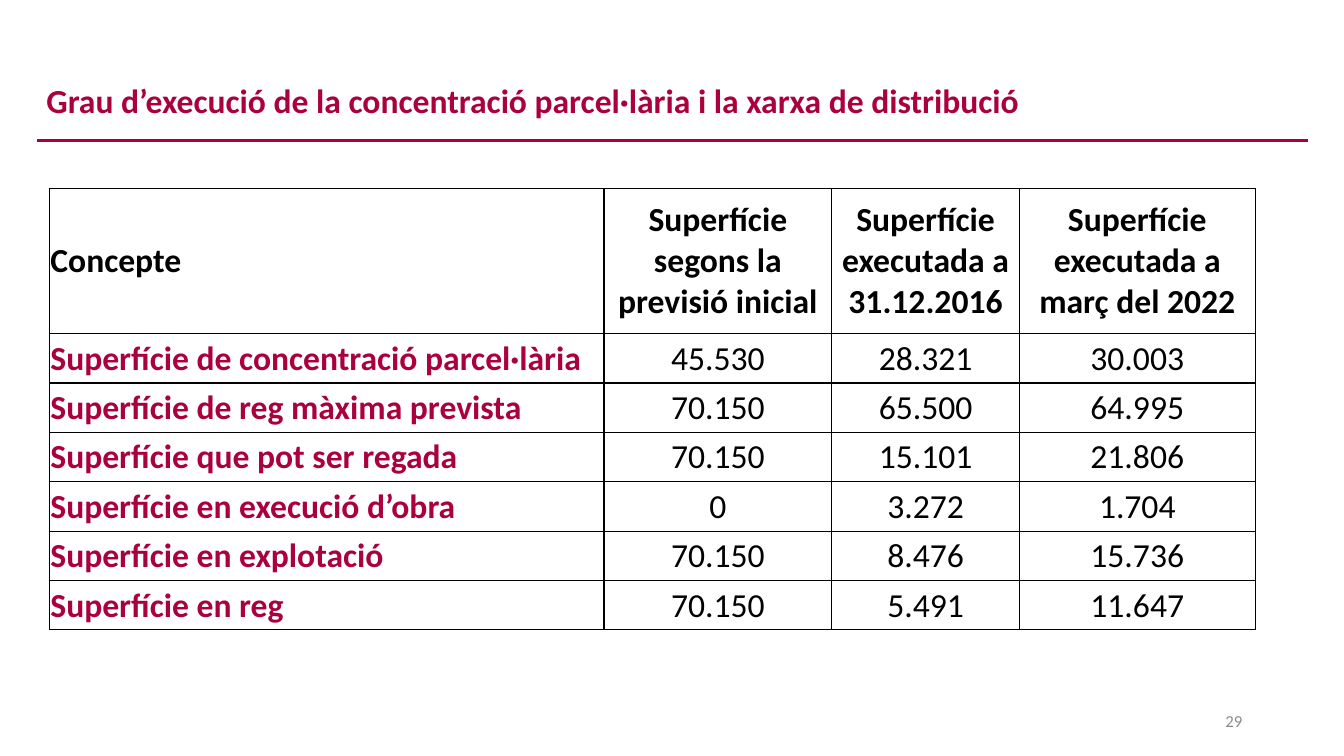
from lxml import etree
from pptx import Presentation
from pptx import util as u
from pptx.dml.color import RGBColor
from pptx.enum import shapes, text
from pptx.oxml.ns import qn

PX = 9144  # EMU in one px, 100 px to the inch
COLORS = {"crimson": "AB003E", "black": "000000", "white": "FFFFFF", "grey": "8C8C8C"}

TITLE = "Grau d’execució de la concentració parcel·lària i la xarxa de distribució"
COL_WIDTHS = [550, 226, 186, 234]
HEADER_HEIGHT, ROW_HEIGHT = 144, 49
ROWS = [
    ["Concepte", "Superfície segons la previsió inicial",
     "Superfície executada a 31.12.2016", "Superfície executada a març del 2022"],
    ["Superfície de concentració parcel·lària", "45.530", "28.321", "30.003"],
    ["Superfície de reg màxima prevista", "70.150", "65.500", "64.995"],
    ["Superfície que pot ser regada", "70.150", "15.101", "21.806"],
    ["Superfície en execució d’obra", "0", "3.272", "1.704"],
    ["Superfície en explotació", "70.150", "8.476", "15.736"],
    ["Superfície en reg", "70.150", "5.491", "11.647"],
]


def px(*lengths):
    return [u.Emu(length * PX) for length in lengths]


def rgb(name):
    return RGBColor.from_string(COLORS[name])


def set_attrs(obj, values):
    for name, value in values.items():
        setattr(obj, name, value)


def write(tf, content, size, color, bold=False, align=text.PP_ALIGN.LEFT):
    tf.text = content
    p = tf.paragraphs[0]
    p.alignment = align
    font = p.runs[0].font
    set_attrs(font, {"name": "Calibri", "size": u.Pt(size), "bold": bold})
    font.color.rgb = rgb(color)
    return p


def place_text(sp, box, content, size, color, **style):
    """Position a title or text box and fill it with one paragraph."""
    set_attrs(sp, dict(zip(("left", "top", "width", "height"), px(*box))))
    set_attrs(sp.text_frame, {"word_wrap": True, "auto_size": text.MSO_AUTO_SIZE.NONE,
                              "vertical_anchor": text.MSO_ANCHOR.MIDDLE})
    return write(sp.text_frame, content, size, color, **style)


def add_rule(s, x1, x2, y):
    line = s.shapes.add_connector(shapes.MSO_CONNECTOR.STRAIGHT, *px(x1, y, x2, y))
    line.line.color.rgb = rgb("crimson")
    line.line.width = u.Pt(2.25)
    etree.SubElement(line._element.spPr, qn("a:effectLst"))


def add_borders(cell):
    tc_pr = cell._tc.get_or_add_tcPr()
    for side in ("lnL", "lnR", "lnT", "lnB"):
        ln = etree.SubElement(tc_pr, qn(f"a:{side}"), w=str(u.Pt(1)))
        fill = etree.SubElement(ln, qn("a:solidFill"))
        etree.SubElement(fill, qn("a:srgbClr"), val=COLORS["black"])


def format_cell(cell, content, is_header, is_label):
    set_attrs(cell, {"vertical_anchor": text.MSO_ANCHOR.MIDDLE, "margin_bottom": 0,
                     **dict.fromkeys(("margin_left", "margin_right", "margin_top"), u.Emu(PX))})
    add_borders(cell)
    cell.fill.solid()
    cell.fill.fore_color.rgb = rgb("white")
    write(cell.text_frame, content, 24,
          "crimson" if is_label and not is_header else "black",
          bold=is_header or is_label,
          align=text.PP_ALIGN.JUSTIFY if is_label else text.PP_ALIGN.CENTER)


def add_surface_table(s, left, top):
    heights = [HEADER_HEIGHT] + [ROW_HEIGHT] * (len(ROWS) - 1)
    table = s.shapes.add_table(len(ROWS), len(COL_WIDTHS),
                               *px(left, top, sum(COL_WIDTHS), sum(heights))).table
    for column, width in zip(table.columns, px(*COL_WIDTHS)):
        column.width = width
    for row, height in zip(table.rows, px(*heights)):
        row.height = height
    for i, values in enumerate(ROWS):
        for j, value in enumerate(values):
            format_cell(table.cell(i, j), value, i == 0, j == 0)


def main():
    prs = Presentation()
    prs.slide_width, prs.slide_height = px(1333, 750)
    s = prs.slides.add_slide(prs.slide_layouts[5])
    add_rule(s, 37, 1297, 139)
    p = place_text(s.shapes.title, (36, 70, 1260, 64), TITLE, 24, "crimson", bold=True)
    p.line_spacing = 0.9
    page_box = (942, 695, 300, 40)
    place_text(s.shapes.add_textbox(*px(*page_box)), page_box, "29", 12, "grey",
               align=text.PP_ALIGN.RIGHT)
    add_surface_table(s, 49, 187)
    prs.save("out.pptx")


if __name__ == "__main__":
    main()
